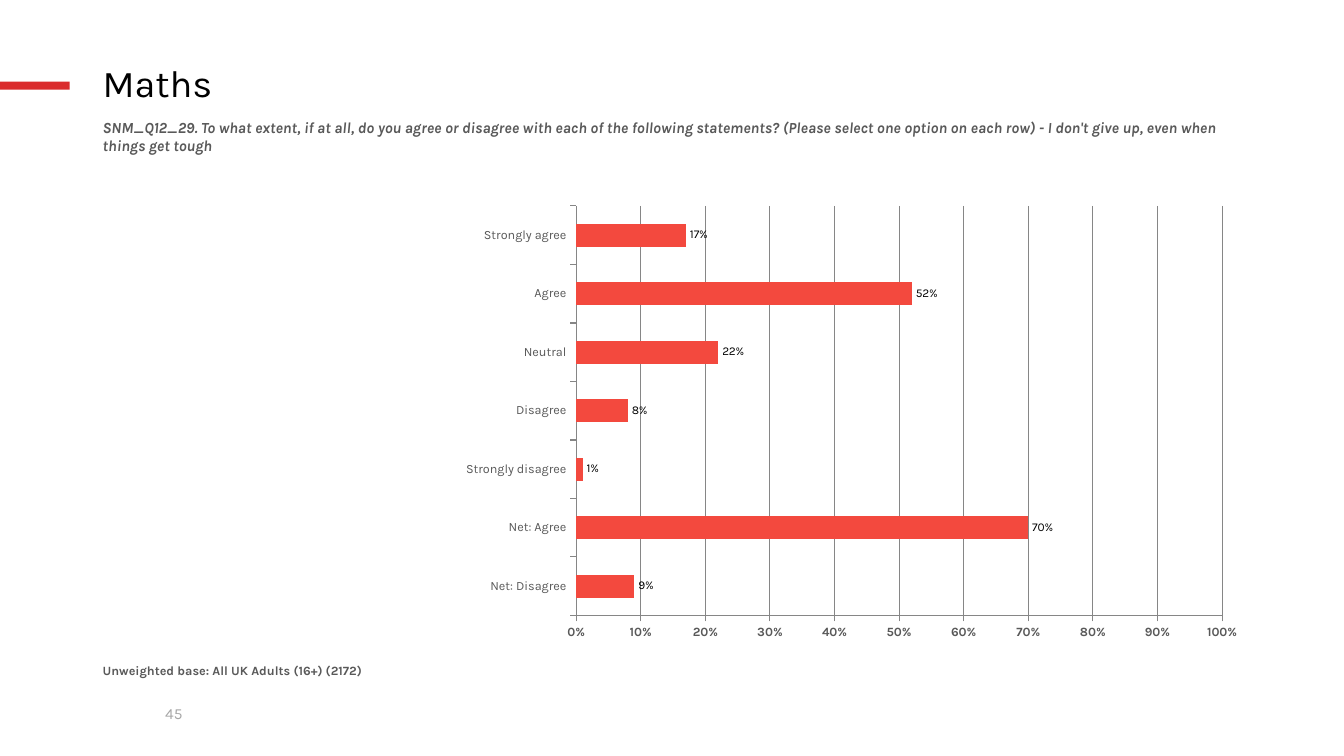
from dataclasses import dataclass, field

from lxml.etree import SubElement
from pptx import Presentation
from pptx.chart.axis import _BaseAxis
from pptx.chart.chart import Chart
from pptx.chart.data import CategoryChartData
from pptx.dml.color import RGBColor
from pptx.enum.chart import XL_CHART_TYPE, XL_LABEL_POSITION, XL_TICK_LABEL_POSITION, XL_TICK_MARK
from pptx.enum.shapes import MSO_SHAPE
from pptx.enum.text import MSO_ANCHOR
from pptx.oxml.ns import qn
from pptx.slide import Slide
from pptx.text.text import Font
from pptx.util import Inches, Pt

FONT = "Karla"
GREY = "595959"
AXIS_GREY = "868686"
LEFT, WIDTH = 0.92, 11.5

ANSWERS = {
    "Net: Disagree": 0.09,
    "Net: Agree": 0.70,
    "Strongly disagree": 0.01,
    "Disagree": 0.08,
    "Neutral": 0.22,
    "Agree": 0.52,
    "Strongly agree": 0.17,
}


@dataclass
class TextBlock:
    text: str
    top: float
    height: float
    left: float = LEFT
    width: float = WIDTH
    style: dict = field(default_factory=dict)


QUESTION = (
    "SNM_Q12_29. To what extent, if at all, do you agree or disagree with each of the "
    "following statements? (Please select one option on each row) - I don't give up, "
    "even when things get tough"
)
TEXT_BLOCKS = [
    TextBlock("45", 6.94, 0.29, left=1.54, width=0.68, style=dict(size=11, color="A6A6A6")),
    TextBlock("Maths", 0.59, 0.51, style=dict(
        size=27, color="000000", anchor=MSO_ANCHOR.MIDDLE, line_spacing=0.9)),
    TextBlock(QUESTION, 1.12, 0.66, style=dict(size=11, bold=True, italic=True)),
    TextBlock("Unweighted base: All UK Adults (16+) (2172)", 6.53, 0.43,
              style=dict(size=9, bold=True)),
]


def rgb(color: str) -> RGBColor:
    return RGBColor.from_string(color)


def set_font(font: Font, size: float, color: str = GREY, bold: bool = False,
             italic: bool = False) -> None:
    font.name = FONT
    font.size = Pt(size)
    font.bold = bold
    font.italic = italic
    font.color.rgb = rgb(color)


def add_text(slide: Slide, text: str, left: float, top: float, width: float, height: float,
             *, anchor: MSO_ANCHOR = MSO_ANCHOR.TOP, line_spacing: float = 1.0,
             **font_format) -> None:
    shape = slide.shapes.add_textbox(Inches(left), Inches(top), Inches(width), Inches(height))
    frame = shape.text_frame
    frame.word_wrap = True
    frame.vertical_anchor = anchor
    paragraph = frame.paragraphs[0]
    paragraph.line_spacing = line_spacing
    run = paragraph.add_run()
    run.text = text
    set_font(run.font, **font_format)


def add_accent_bar(slide: Slide) -> None:
    shape = slide.shapes.add_shape(
        MSO_SHAPE.RECTANGLE, 0, Inches(0.81), Inches(0.69), Inches(0.08))
    shape.shadow.inherit = False
    shape.fill.solid()
    shape.fill.fore_color.rgb = rgb("DA2C2D")
    shape.line.fill.background()


def style_axis(axis: _BaseAxis, bold: bool = False) -> None:
    axis.tick_label_position = XL_TICK_LABEL_POSITION.LOW
    axis.major_tick_mark = XL_TICK_MARK.OUTSIDE
    axis.minor_tick_mark = XL_TICK_MARK.NONE
    axis.format.line.color.rgb = rgb(AXIS_GREY)
    axis.format.line.width = Pt(0.75)
    set_font(axis.tick_labels.font, 9, bold=bold)


def place_plot(chart: Chart, left: float, top: float, width: float, height: float) -> None:
    """Fix the inner plot area, in fractions of the chart."""
    plot_area = chart.plots[0]._element.getparent()
    for old_layout in plot_area.findall(qn("c:layout")):
        plot_area.remove(old_layout)
    layout = SubElement(plot_area, qn("c:layout"))
    plot_area.insert(0, layout)
    manual = SubElement(layout, qn("c:manualLayout"))
    settings = {"layoutTarget": "inner", "xMode": "edge", "yMode": "edge",
                "x": left, "y": top, "w": width, "h": height}
    for name, value in settings.items():
        SubElement(manual, qn(f"c:{name}")).set("val", str(value))


def add_answer_chart(slide: Slide) -> None:
    data = CategoryChartData(number_format="0%")
    data.categories = list(ANSWERS)
    data.add_series("Series 1", list(ANSWERS.values()))
    chart = slide.shapes.add_chart(
        XL_CHART_TYPE.BAR_CLUSTERED, Inches(LEFT), Inches(1.89), Inches(WIDTH), Inches(4.53),
        data).chart
    chart.has_legend = False
    chart.has_title = False
    set_font(chart.font, 18, "000000")
    place_plot(chart, 0.417, 0.034, 0.557, 0.897)

    # Axes and gridlines
    style_axis(chart.category_axis)
    value_axis = chart.value_axis
    style_axis(value_axis, bold=True)
    value_axis.minimum_scale = 0
    value_axis.maximum_scale = 1
    value_axis.major_unit = 0.1
    value_axis.tick_labels.number_format = "0%"
    value_axis.tick_labels.number_format_is_linked = False
    value_axis.has_major_gridlines = True
    gridline = value_axis.major_gridlines.format.line
    gridline.color.rgb = rgb(AXIS_GREY)
    gridline.width = Pt(0.75)

    # Bars and value labels
    plot = chart.plots[0]
    plot.gap_width = 150
    plot.overlap = -10
    plot.vary_by_categories = False
    series = plot.series[0]
    series.invert_if_negative = False
    series.format.fill.solid()
    series.format.fill.fore_color.rgb = rgb("F3493E")
    labels = series.data_labels
    labels.show_value = True
    labels.position = XL_LABEL_POSITION.OUTSIDE_END
    labels.number_format = "0%"
    labels.number_format_is_linked = False
    set_font(labels.font, 8.5, "000000")


def main() -> None:
    presentation = Presentation()
    presentation.slide_width = Inches(13.33)
    presentation.slide_height = Inches(7.5)
    slide = presentation.slides.add_slide(presentation.slide_layouts[6])

    add_accent_bar(slide)
    for block in TEXT_BLOCKS:
        add_text(slide, block.text, block.left, block.top, block.width, block.height,
                 **block.style)
    add_answer_chart(slide)
    presentation.save("out.pptx")


if __name__ == "__main__":
    main()
